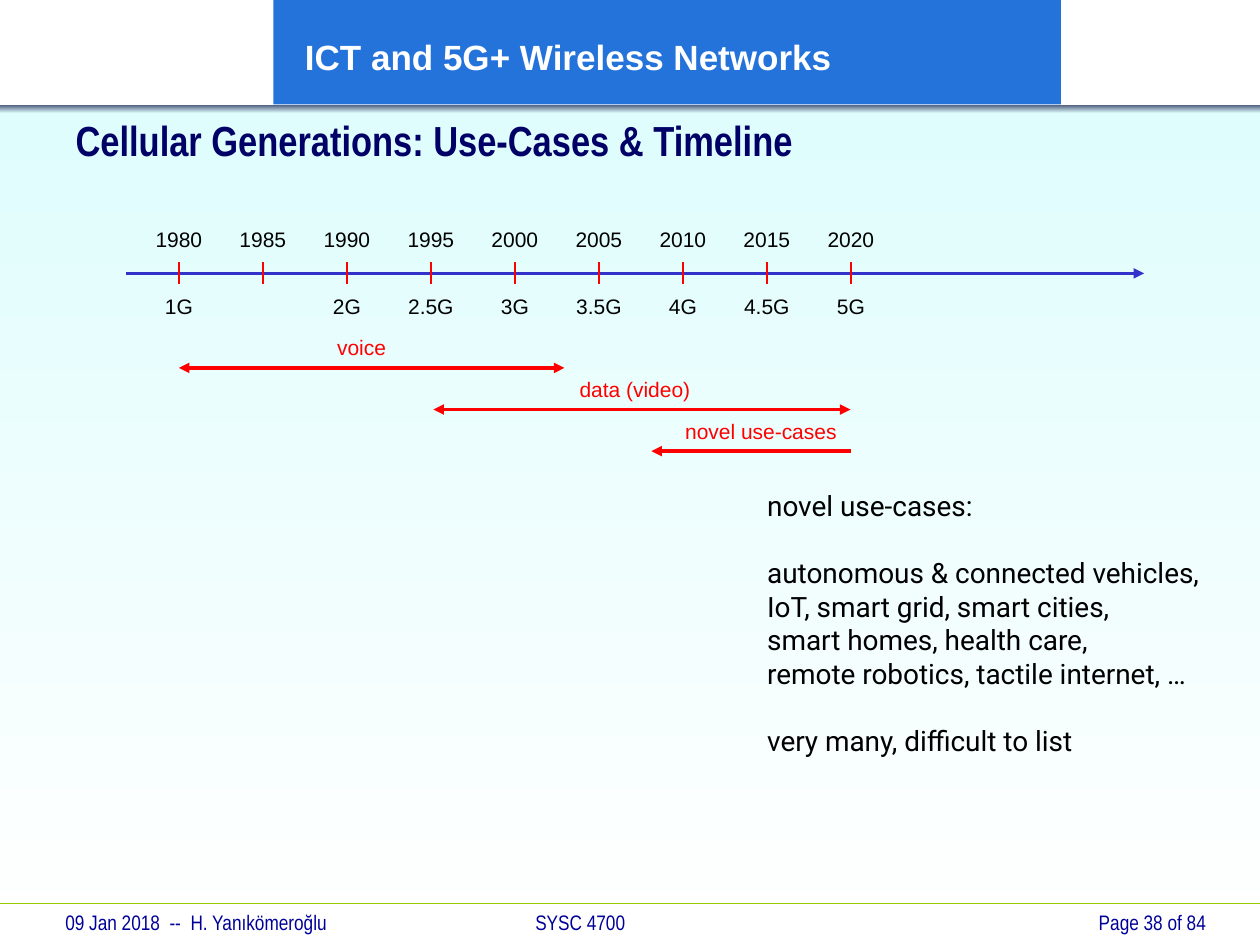
from dataclasses import dataclass

from lxml import etree
from pptx import Presentation
from pptx.dml.color import RGBColor
from pptx.enum import shapes, text
from pptx.oxml.ns import qn
from pptx.util import Inches, Pt

COLORS = {
    "sky": "DFFDFD", "white": "FFFFFF", "slate": "475577", "banner": "2473DB",
    "lime": "99CC00", "footer": "000099", "title": "000066",
    "axis": "3333CC", "red": "FF0000", "black": "000000",
}
LEFT, CENTER, RIGHT = text.PP_ALIGN.LEFT, text.PP_ALIGN.CENTER, text.PP_ALIGN.RIGHT
MIDDLE, TOP = text.MSO_ANCHOR.MIDDLE, text.MSO_ANCHOR.TOP


@dataclass
class Generation:
    year: int
    name: str = ""


@dataclass
class Era:
    label: str
    label_center: float
    start: float
    end: float
    y: float
    open_ended: bool = False


GENERATIONS = [
    Generation(1980, "1G"), Generation(1985), Generation(1990, "2G"),
    Generation(1995, "2.5G"), Generation(2000, "3G"), Generation(2005, "3.5G"),
    Generation(2010, "4G"), Generation(2015, "4.5G"), Generation(2020, "5G"),
]
ERAS = [
    Era("voice", 2.87, 1.42, 4.48, 2.92),
    Era("data (video)", 5.04, 3.44, 6.75, 3.25),
    Era("novel use-cases", 6.04, 5.17, 6.75, 3.58, open_ended=True),
]
USE_CASES = [
    ["novel use-cases:"],
    ["autonomous & connected vehicles,", "IoT, smart grid, smart cities,",
     "smart homes, health care,", "remote robotics, tactile internet, …"],
    ["very many, difficult to list"],
]
FIRST_TICK, TICK_STEP, AXIS_Y = 1.42, 2 / 3, 2.17


def rgb(name: str) -> RGBColor:
    return RGBColor.from_string(COLORS[name])


def write(shape, groups: list[list[str]], *, size: float = 12, font: str = "Arial",
          color: str = "black", bold: bool = False, align=LEFT, anchor=TOP,
          wrap: bool = False, gap: float = 0) -> None:
    """Fill a shape with groups of lines, set apart by gap points."""
    frame = shape.text_frame
    frame.word_wrap = wrap
    frame.auto_size = text.MSO_AUTO_SIZE.NONE
    frame.vertical_anchor = anchor
    for number, group in enumerate(groups):
        for row, line in enumerate(group):
            first = number == row == 0
            paragraph = frame.paragraphs[0] if first else frame.add_paragraph()
            paragraph.alignment = align
            paragraph.space_before = Pt(gap if number and row == 0 else 0)
            run = paragraph.add_run()
            run.text = line
            run.font.size, run.font.name, run.font.bold = Pt(size), font, bold
            run.font.color.rgb = rgb(color)


def add_text(slide, x: float, y: float, w: float, h: float,
             groups: list[list[str]], **style) -> None:
    box = slide.shapes.add_textbox(Inches(x), Inches(y), Inches(w), Inches(h))
    write(box, groups, **style)


def add_label(slide, center: float, y: float, label: str, color: str = "black",
              width: float = 0.57) -> None:
    add_text(slide, center - width / 2, y, width, 0.3, [[label]],
             color=color, align=CENTER)


def add_band(slide, x: float, y: float, w: float, h: float, *fill_colors: str):
    """Add a rectangle with a plain fill, or a top-to-bottom gradient of two."""
    band = slide.shapes.add_shape(shapes.MSO_SHAPE.RECTANGLE,
                                  Inches(x), Inches(y), Inches(w), Inches(h))
    band.shadow.inherit = False
    band.line.fill.background()
    if len(fill_colors) == 1:
        band.fill.solid()
        band.fill.fore_color.rgb = rgb(fill_colors[0])
    else:
        band.fill.gradient()
        band.fill.gradient_angle = 270
        for stop, color in zip(band.fill.gradient_stops, fill_colors):
            stop.color.rgb = rgb(color)
    return band


def add_line(slide, x1: float, y1: float, x2: float, y2: float, color: str,
             width: float = 0.75, arrows: tuple[str, ...] = ()) -> None:
    """Add a line; arrows names its arrowhead ends, headEnd before tailEnd."""
    line = slide.shapes.add_connector(shapes.MSO_CONNECTOR.STRAIGHT, Inches(x1),
                                      Inches(y1), Inches(x2), Inches(y2))
    line.line.color.rgb = rgb(color)
    line.line.width = Pt(width)
    for end in arrows:
        etree.SubElement(line.line._get_or_add_ln(), qn(f"a:{end}"), type="triangle")
    etree.SubElement(line._element.spPr, qn("a:effectLst"))


def draw_frame(slide) -> None:
    add_band(slide, 0, 0.86, 10, 6.64, "sky", "white")
    add_line(slide, 0, 7.17, 10, 7.17, "lime")
    footer = dict(font="Arial Narrow", color="footer")
    add_text(slide, 0.42, 7.17, 3, 0.33, [["09 Jan 2018  --  H. Yanıkömeroğlu"]], **footer)
    add_text(slide, 4.15, 7.17, 1.5, 0.33, [["SYSC 4700"]], **footer)
    add_text(slide, 7.5, 7.17, 2.17, 0.25, [["Page 38 of 84"]], align=RIGHT,
             wrap=True, **footer)
    add_band(slide, 0, 0.83, 10, 0.07, "slate", "sky")
    banner = add_band(slide, 2.17, 0, 6.25, 0.83, "banner")
    banner.text_frame.margin_left = Inches(0.25)
    banner.text_frame.margin_top = Inches(0.12)
    write(banner, [["ICT and 5G+ Wireless Networks"]], size=20, color="white",
          bold=True, anchor=MIDDLE, wrap=True)


def draw_timeline(slide) -> None:
    add_line(slide, 1, AXIS_Y, 9.08, AXIS_Y, "axis", 2, ("tailEnd",))
    for index, generation in enumerate(GENERATIONS):
        x = FIRST_TICK + index * TICK_STEP
        add_line(slide, x, 2.08, x, 2.25, "red")
        add_label(slide, x, 1.75, str(generation.year))
        if generation.name:
            add_label(slide, x, 2.28, generation.name)
    for era in ERAS:
        arrows = ("tailEnd",) if era.open_ended else ("headEnd", "tailEnd")
        add_line(slide, era.end, era.y, era.start, era.y, "red", 2, arrows)
        add_label(slide, era.label_center, era.y - 0.31, era.label, "red", 1.46)


def main() -> None:
    deck = Presentation()
    deck.slide_width, deck.slide_height = Inches(10), Inches(7.5)
    slide = deck.slides.add_slide(deck.slide_layouts[5])
    draw_frame(slide)
    draw_timeline(slide)
    add_text(slide, 5.99, 3.83, 3.68, 2.26, USE_CASES, size=16, font="Roboto", gap=19)

    title = slide.shapes.title
    title.left, title.top = Inches(0.5), Inches(0.9)
    title.width, title.height = Inches(6.92), Inches(0.42)
    write(title, [["Cellular Generations: Use-Cases & Timeline"]], size=24,
          font="Arial Narrow", color="title", bold=True, anchor=MIDDLE, wrap=True)
    slide.shapes._spTree.append(title._element)  # in front of the background
    deck.save("out.pptx")


if __name__ == "__main__":
    main()
